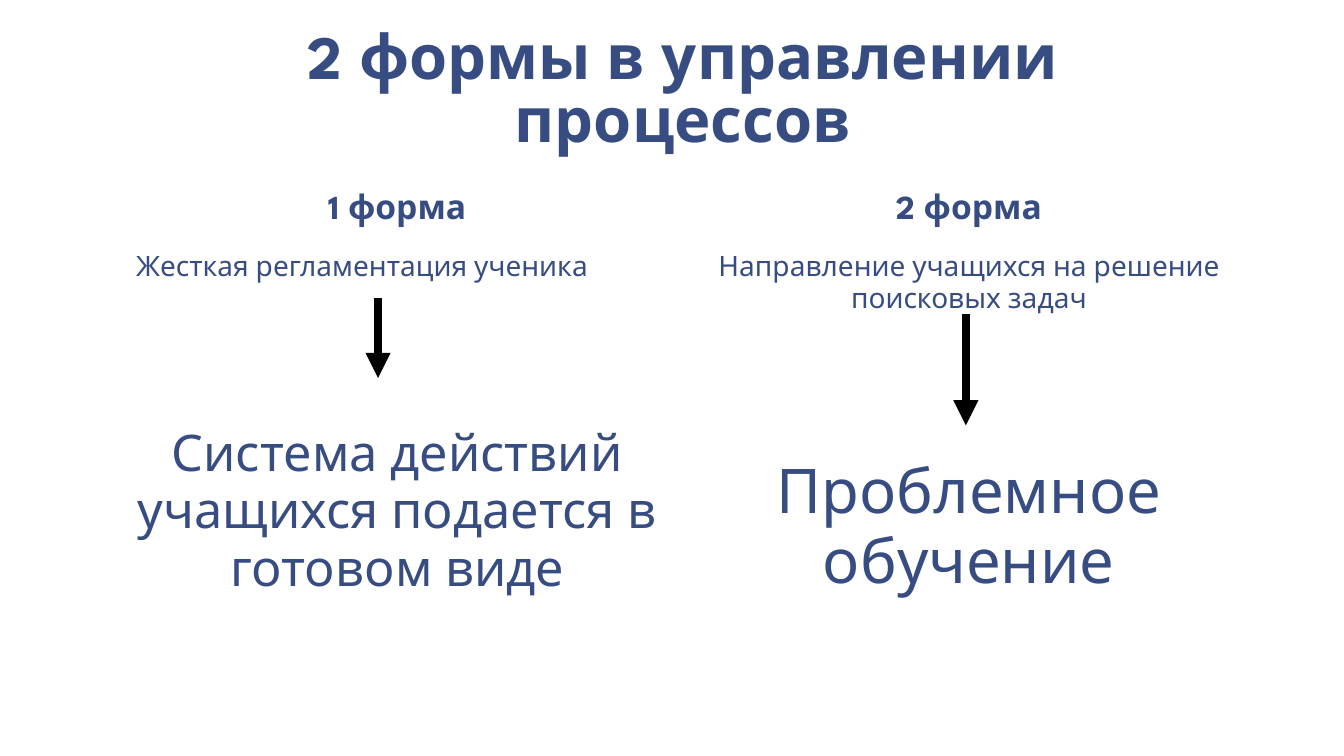
import pptx
import pptx.dml.color
import pptx.enum.shapes
import pptx.enum.text
import pptx.oxml
import pptx.oxml.ns
import pptx.util

Inches = pptx.util.Inches
Pt = pptx.util.Pt
Align = pptx.enum.text.PP_ALIGN
Anchor = pptx.enum.text.MSO_ANCHOR
COLORS = {"heading": "374C81", "arrow": "000000", "background": "FFFFFF"}


def rgb(role):
    return pptx.dml.color.RGBColor.from_string(COLORS[role])


def apply(target, values):
    for name, value in values.items():
        setattr(target, name, value)


class FormsSlide:
    """Draws text and arrows on one slide in a shared style."""

    font = "League Spartan"
    frame = {
        "word_wrap": True,
        "margin_left": Inches(0.13),
        "margin_right": Inches(0.13),
        "margin_top": Inches(0.07),
        "margin_bottom": Inches(0.07),
    }

    def __init__(self, deck):
        self.slide = deck.slides.add_slide(deck.slide_layouts[6])
        background = self.slide.background.fill
        background.solid()
        background.fore_color.rgb = rgb("background")

    def text(self, box, lines, anchor=Anchor.TOP, spacing=0.95, bold=False):
        frame = self.slide.shapes.add_textbox(*map(Inches, box)).text_frame
        apply(frame, {**self.frame, "vertical_anchor": anchor})
        for index, (wording, size, align, before) in enumerate(lines):
            paragraph = frame.add_paragraph() if index else frame.paragraphs[0]
            apply(paragraph, {"alignment": align, "line_spacing": spacing, "space_before": Pt(before)})
            run = paragraph.add_run()
            run.text = wording
            apply(run.font, {"name": self.font, "size": Pt(size), "bold": bold})
            run.font.color.rgb = rgb("heading")

    def arrow(self, x, top, bottom):
        arrow = self.slide.shapes.add_connector(
            pptx.enum.shapes.MSO_CONNECTOR.STRAIGHT,
            Inches(x), Inches(top), Inches(x), Inches(bottom),
        )
        arrow.line.width = Pt(6)
        arrow.line.color.rgb = rgb("arrow")
        namespace = pptx.oxml.ns.nsdecls("a")
        arrow.line._get_or_add_ln().append(
            pptx.oxml.parse_xml(f'<a:tailEnd {namespace} type="triangle"/>')
        )
        arrow._element.spPr.append(pptx.oxml.parse_xml(f"<a:effectLst {namespace}/>"))


def main():
    deck = pptx.Presentation()
    apply(deck, {"slide_width": Inches(13.33), "slide_height": Inches(7.5)})
    page = FormsSlide(deck)
    page.text(
        (1.22, 0.08, 11.11, 1.53),
        [("2 формы в управлении процессов", 44, Align.CENTER, 0)],
        Anchor.BOTTOM, 0.85, True,
    )
    forms = [
        (1.22, "1 форма", "Жесткая регламентация ученика", Align.LEFT,
         "Система действий учащихся подается в готовом виде", 36, (3.75, 2.96, 3.75)),
        (6.89, "2 форма", "Направление учащихся на решение поисковых задач", Align.CENTER,
         "Проблемное обучение", 44, (9.58, 3.12, 4.22)),
    ]
    for left, form, method, method_align, result, result_size, arrow in forms:
        page.text((left, 1.76, 5.44, 0.56), [(form, 24, Align.CENTER, 0)], Anchor.BOTTOM, bold=True)
        page.text(
            (left, 2.42, 5.44, 4.33),
            [(method, 20, method_align, 0), (result, result_size, Align.CENTER, 101.7)],
        )
        page.arrow(*arrow)
    deck.save("out.pptx")


if __name__ == "__main__":
    main()
